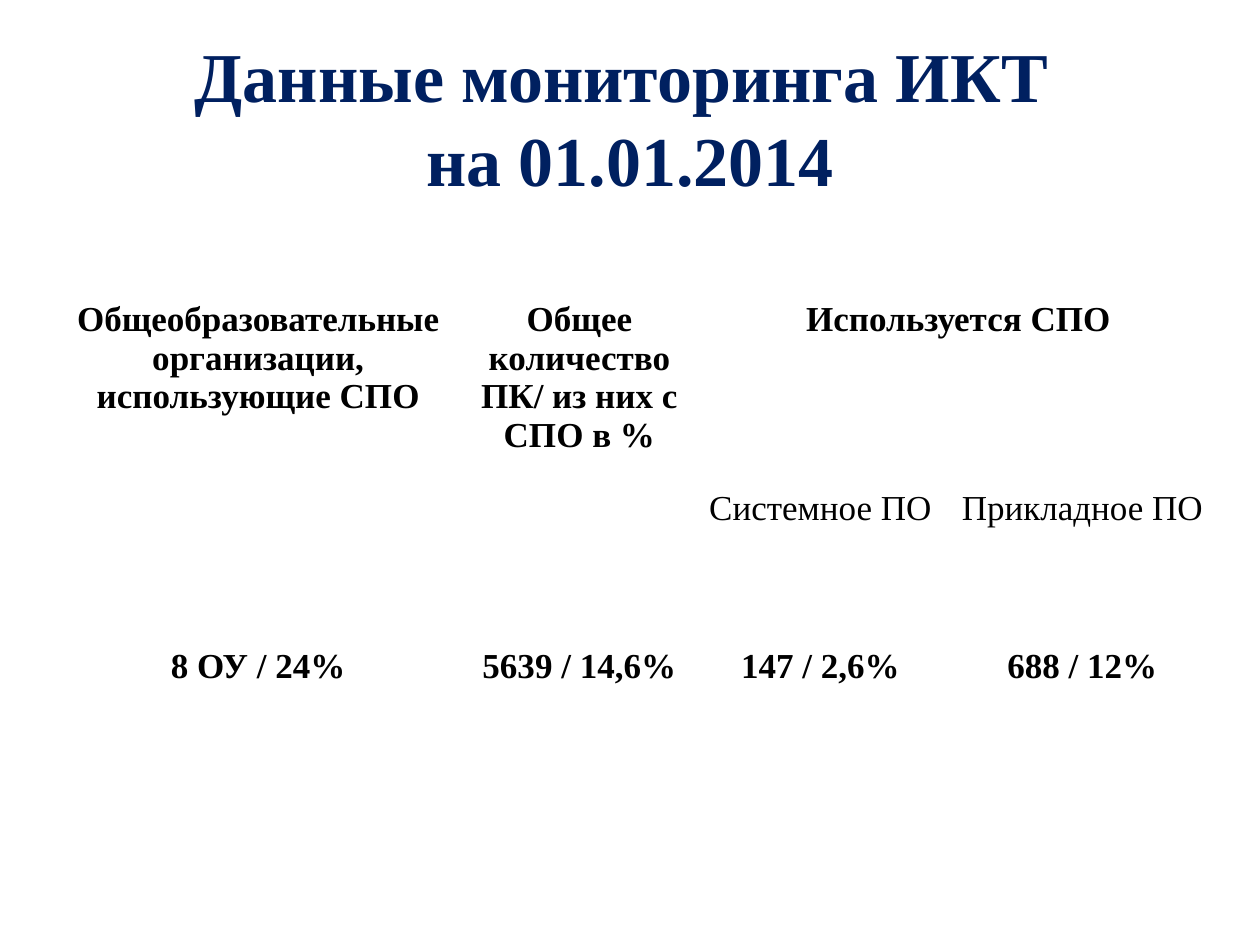
from pptx import Presentation
from pptx.dml.color import RGBColor
from pptx.enum.text import MSO_ANCHOR, PP_ALIGN
from pptx.util import Cm, Pt

NAVY = RGBColor(0x00, 0x20, 0x60)
BLACK = RGBColor(0, 0, 0)
WHITE = RGBColor(0xFF, 0xFF, 0xFF)

TITLE = "Данные мониторинга ИКТ \vна 01.01.2014"
ROWS = [
    ["Общеобразовательные организации, использующие СПО",
     "Общее количество ПК/ из них с СПО в %", "Используется СПО", ""],
    ["", "", "Системное ПО", "Прикладное ПО"],
    ["8 ОУ / 24%", "5639 / 14,6%", "147 / 2,6%", "688 / 12%"],
]
SUBHEADER_ROW = 1
COLUMN_WIDTHS = [Cm(8.23), Cm(4.72), Cm(5), Cm(5.56)]
ROW_HEIGHTS = [Cm(3.81), Cm(3.18), Cm(2.44)]

TITLE_FORMAT = {"name": "Times New Roman", "size": Pt(40), "bold": True}
CELL_FORMAT = {"name": "Times New Roman", "size": Pt(20)}


def write(frame, text, color, font_format):
    """Fill a text frame with centred text in one format."""
    frame.text = text
    for para in frame.paragraphs:
        para.alignment = PP_ALIGN.CENTER
        for span in para.runs:
            span.font.color.rgb = color
            for name, value in font_format.items():
                setattr(span.font, name, value)


def add_title(slide):
    title = slide.shapes.title
    place = {"left": Cm(1.27), "top": Cm(0.76), "width": Cm(22.86), "height": Cm(3.18)}
    for name, value in place.items():
        setattr(title, name, value)
    title.text_frame.vertical_anchor = MSO_ANCHOR.MIDDLE
    write(title.text_frame, TITLE, NAVY, TITLE_FORMAT)


def add_monitoring_table(slide):
    table = slide.shapes.add_table(
        len(ROWS), len(COLUMN_WIDTHS), Cm(1.09), Cm(5.92),
        sum(COLUMN_WIDTHS), sum(ROW_HEIGHTS)).table
    for column, width in zip(table.columns, COLUMN_WIDTHS):
        column.width = width
    for row, height in zip(table.rows, ROW_HEIGHTS):
        row.height = height
    table.cell(0, 2).merge(table.cell(0, 3))

    for r, texts in enumerate(ROWS):
        cell_format = {**CELL_FORMAT, "bold": r != SUBHEADER_ROW}
        for c, text in enumerate(texts):
            cell = table.cell(r, c)
            cell.fill.solid()
            cell.fill.fore_color.rgb = WHITE
            if text:
                write(cell.text_frame, text, BLACK, cell_format)


def main():
    deck = Presentation()
    deck.slide_width, deck.slide_height = Cm(25.4), Cm(19.05)
    slide = deck.slides.add_slide(deck.slide_layouts[5])
    add_title(slide)
    add_monitoring_table(slide)
    deck.save("out.pptx")


if __name__ == "__main__":
    main()
